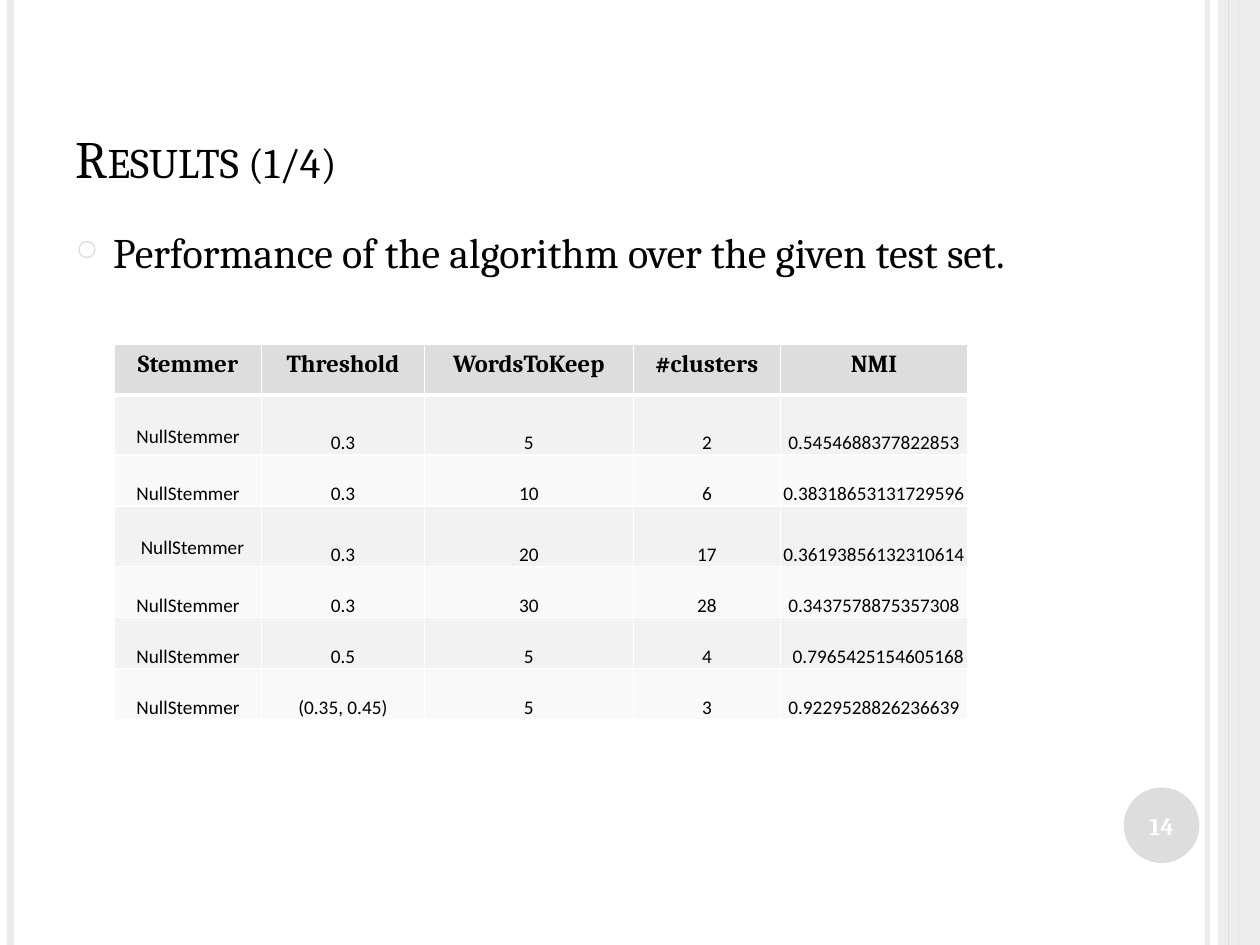
from lxml import etree
from pptx import Presentation
from pptx.dml.color import RGBColor
from pptx.enum.shapes import MSO_CONNECTOR, MSO_SHAPE
from pptx.enum.text import MSO_ANCHOR, PP_ALIGN
from pptx.oxml.ns import qn
from pptx.util import Pt

STRAIGHT = MSO_CONNECTOR.STRAIGHT
RECTANGLE, OVAL = MSO_SHAPE.RECTANGLE, MSO_SHAPE.OVAL
TOP, MIDDLE, BOTTOM = MSO_ANCHOR.TOP, MSO_ANCHOR.MIDDLE, MSO_ANCHOR.BOTTOM
LEFT, CENTER = PP_ALIGN.LEFT, PP_ALIGN.CENTER

BLACK = RGBColor(0x00, 0x00, 0x00)
WHITE = RGBColor(0xFF, 0xFF, 0xFF)
GREY = RGBColor(0xDD, 0xDD, 0xDD)
PALE_GREY = RGBColor(0xEB, 0xEB, 0xEB)
BAND_COLORS = (RGBColor(0xF2, 0xF2, 0xF2), RGBColor(0xF9, 0xF9, 0xF9))

TITLE_FONT = {"name": "Cambria", "size": Pt(30), "bold": False}
BODY_FONT = {"name": "Cambria", "size": Pt(24), "bold": False}
HEADER_FONT = {"name": "Cambria", "size": Pt(14), "bold": True}
CELL_FONT = {"name": "Calibri", "size": Pt(11), "bold": False}

SLIDE_WIDTH, SLIDE_HEIGHT = 720, 540
COLUMN_WIDTHS = (84, 93, 119.5, 84, 107)
ROW_HEIGHT, TALL_ROW_HEIGHT = 29.2, 34.4
TALL_ROWS = (1, 3)
SHIFTED_CELLS = ((3, 0), (5, 4))
RESULTS = (
    ("Stemmer", "Threshold", "WordsToKeep", "#clusters", "NMI"),
    ("NullStemmer", "0.3", "5", "2", "0.5454688377822853"),
    ("NullStemmer", "0.3", "10", "6", "0.38318653131729596"),
    ("NullStemmer", "0.3", "20", "17", "0.36193856132310614"),
    ("NullStemmer", "0.3", "30", "28", "0.3437578875357308"),
    ("NullStemmer", "0.5", "5", "4", "0.7965425154605168"),
    ("NullStemmer", "(0.35, 0.45)", "5", "3", "0.9229528826236639"),
)


def set_attributes(target, values):
    for name, value in values.items():
        setattr(target, name, value)


def set_opacity(properties, percent):
    color = next(properties.iter(qn("a:srgbClr")))
    etree.SubElement(color, qn("a:alpha"), val=str(percent * 1000))


def write_text(text_frame, text, font, color, alignment):
    paragraph = text_frame.paragraphs[0]
    paragraph.alignment = alignment
    run = paragraph.add_run()
    run.text = text
    set_attributes(run.font, font)
    run.font.color.rgb = color
    return paragraph


def add_vertical_line(slide, x, width, color, opacity=100):
    line = slide.shapes.add_connector(STRAIGHT, Pt(x), 0, Pt(x), Pt(SLIDE_HEIGHT))
    line.line.width = Pt(width)
    line.line.color.rgb = color
    properties = line._element.spPr
    if opacity < 100:
        set_opacity(properties, opacity)
    etree.SubElement(properties, qn("a:effectLst"))


def add_filled_shape(slide, kind, bounds, color):
    shape = slide.shapes.add_shape(kind, *map(Pt, bounds))
    shape.shadow.inherit = False
    shape.fill.solid()
    shape.fill.fore_color.rgb = color
    shape.line.fill.background()
    return shape


def add_text_box(slide, bounds, text, font, anchor):
    text_frame = slide.shapes.add_textbox(*map(Pt, bounds)).text_frame
    set_attributes(text_frame, {"word_wrap": True, "vertical_anchor": anchor})
    return write_text(text_frame, text, font, BLACK, LEFT)


def add_bullet(paragraph, indent):
    paragraph.space_before = Pt(6)
    properties = paragraph._p.get_or_add_pPr()
    properties.set("marL", str(Pt(indent)))
    properties.set("indent", str(-Pt(indent)))
    color = etree.SubElement(properties, qn("a:buClr"))
    etree.SubElement(color, qn("a:srgbClr"), val=str(GREY))
    etree.SubElement(properties, qn("a:buSzPct"), val="70000")
    etree.SubElement(properties, qn("a:buChar"), char="○")


def set_borders(cell, widths):
    properties = cell._tc.get_or_add_tcPr()
    for position, (side, width) in enumerate(widths.items()):
        border = etree.Element(qn(f"a:ln{side}"), w=str(Pt(width)))
        fill = etree.SubElement(border, qn("a:solidFill"))
        etree.SubElement(fill, qn("a:srgbClr"), val=str(WHITE))
        properties.insert(position, border)


def cell_layout(row, column):
    if row == 0:
        return {"vertical_anchor": TOP}
    raised = row in TALL_ROWS and column == 0
    return {
        "vertical_anchor": BOTTOM,
        "margin_left": Pt(6 if (row, column) in SHIFTED_CELLS else 1),
        "margin_right": Pt(1),
        "margin_top": Pt(1),
        "margin_bottom": Pt(3.6 if raised else 0),
    }


def add_results_table(slide, left, top):
    heights = [TALL_ROW_HEIGHT if row in TALL_ROWS else ROW_HEIGHT
               for row in range(len(RESULTS))]
    bounds = (left, top, sum(COLUMN_WIDTHS), sum(heights))
    table = slide.shapes.add_table(
        len(RESULTS), len(COLUMN_WIDTHS), *map(Pt, bounds)).table
    for column, width in zip(table.columns, COLUMN_WIDTHS):
        column.width = Pt(width)
    for row, values in enumerate(RESULTS):
        table.rows[row].height = Pt(heights[row])
        for column, value in enumerate(values):
            cell = table.cell(row, column)
            set_attributes(cell, cell_layout(row, column))
            cell.fill.solid()
            cell.fill.fore_color.rgb = BAND_COLORS[(row - 1) % 2] if row else GREY
            font = CELL_FONT if row else HEADER_FONT
            write_text(cell.text_frame, value, font, BLACK, CENTER)
            set_borders(cell, {"L": 1, "R": 1, "T": 3 if row == 1 else 1,
                               "B": 1 if row else 3})


def add_page_number(slide):
    badge = add_filled_shape(slide, OVAL, (642.2, 450, 43.2, 43.2), GREY)
    set_attributes(badge.text_frame, {
        "vertical_anchor": MIDDLE, "word_wrap": False,
        "margin_left": 0, "margin_right": 0})
    write_text(badge.text_frame, "14", HEADER_FONT, WHITE, CENTER)


def add_side_bands(slide):
    add_vertical_line(slide, 690, 3, PALE_GREY, 93)
    add_vertical_line(slide, 6, 4.5, PALE_GREY)
    add_vertical_line(slide, 708, 1.5, GREY)
    band = add_filled_shape(slide, RECTANGLE, (696, 0, 24, SLIDE_HEIGHT), PALE_GREY)
    set_opacity(band._element.spPr, 87)
    add_vertical_line(slide, 702, 0.75, GREY)


def main():
    presentation = Presentation()
    set_attributes(presentation, {
        "slide_width": Pt(SLIDE_WIDTH), "slide_height": Pt(SLIDE_HEIGHT)})
    slide = presentation.slides.add_slide(presentation.slide_layouts[6])
    add_side_bands(slide)
    add_page_number(slide)
    title = add_text_box(slide, (36, 21.6, 588, 90), "Results (1/4)", TITLE_FONT, BOTTOM)
    title.runs[0].font._element.set("cap", "small")
    body = add_text_box(slide, (36, 126, 588, 384),
                        "Performance of the algorithm over the given test set.",
                        BODY_FONT, TOP)
    add_bullet(body, 21.6)
    add_results_table(slide, 65.5, 196.5)
    presentation.save("out.pptx")


if __name__ == "__main__":
    main()
